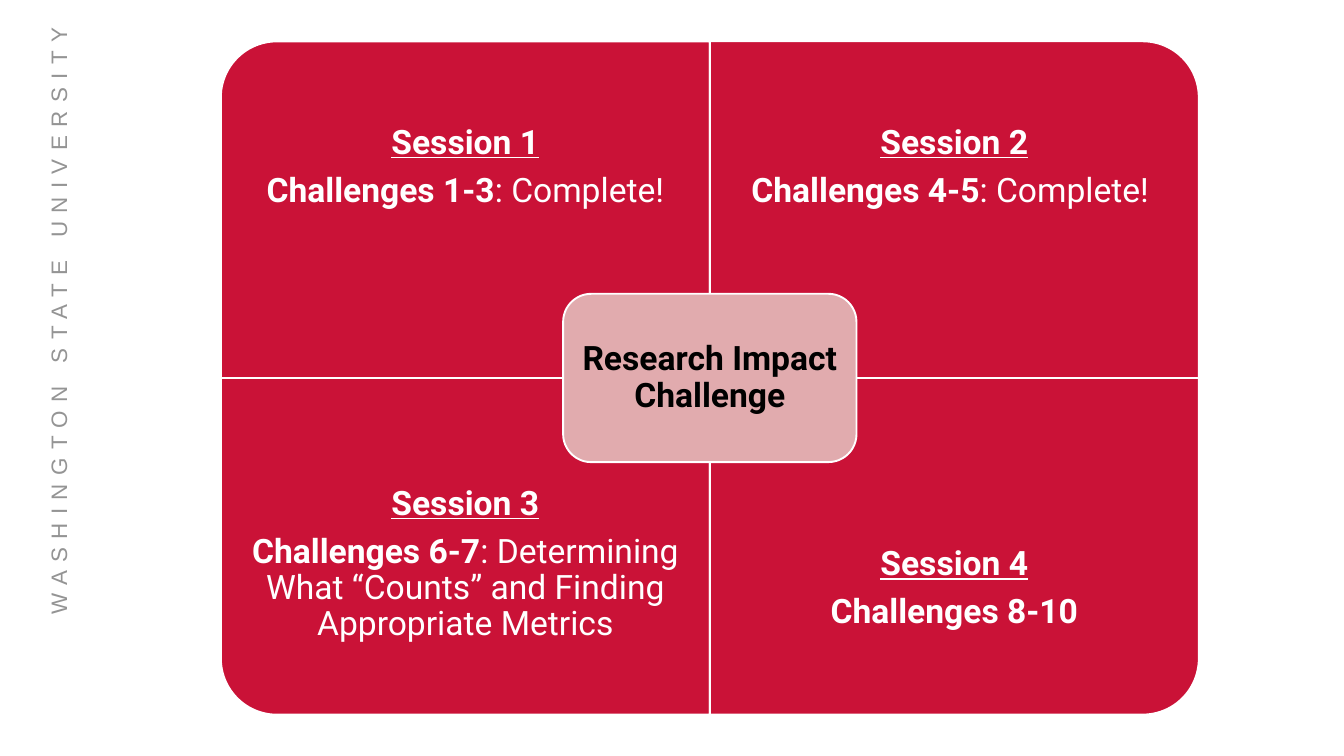
from pptx import Presentation
from pptx.dml.color import RGBColor
from pptx.enum.shapes import MSO_SHAPE
from pptx.enum.text import MSO_ANCHOR, PP_ALIGN
from pptx.util import Inches, Pt

UNIVERSITY = "WASHINGTON STATE UNIVERSITY"
HUB = "Research Impact Challenge"
SESSIONS = [
    {"title": "Session 1", "challenges": "Challenges 1-3", "status": ": Complete!",
     "column": 0, "row": 0, "rotation": 270, "raise": 0},
    {"title": "Session 2", "challenges": "Challenges 4-5", "status": ": Complete! ",
     "column": 1, "row": 0, "rotation": 0, "raise": 0},
    {"title": "Session 3", "challenges": "Challenges 6-7",
     "status": ": Determining What “Counts” and Finding Appropriate Metrics",
     "column": 0, "row": 1, "rotation": 180, "raise": 0.48},
    {"title": "Session 4", "challenges": "Challenges 8-10", "status": "",
     "column": 1, "row": 1, "rotation": 90, "raise": 0},
]
THEME = {
    "crimson": RGBColor(0xCA, 0x12, 0x37),
    "rose": RGBColor(0xE1, 0xAB, 0xAE),
    "white": RGBColor(0xFF, 0xFF, 0xFF),
    "black": RGBColor(0, 0, 0),
    "gray": RGBColor(0x94, 0x94, 0x94),
    "body_font": "Roboto",
    "side_font": "Arial",
    "body_size": Pt(24),
    "side_size": Pt(16),
    "paragraph_gap": Pt(8.4),
    "outline": Pt(1.35),
}
GRID_LEFT, GRID_TOP = 2.19, 0.41
CELL_WIDTH, CELL_HEIGHT = 4.85, 3.34
LABEL_HEIGHT = 2.5
HUB_WIDTH, HUB_HEIGHT = 2.91, 1.67


def add_panel(slide, kind, center_x, center_y, width, height, fill, rotation=0):
    if rotation % 180:
        width, height = height, width
    panel = slide.shapes.add_shape(
        kind, Inches(center_x - width / 2), Inches(center_y - height / 2),
        Inches(width), Inches(height))
    panel.rotation = rotation
    panel.shadow.inherit = False
    panel.fill.solid()
    panel.fill.fore_color.rgb = fill
    panel.line.color.rgb = THEME["white"]
    panel.line.width = THEME["outline"]
    return panel


def set_margins(frame, margin, extra_bottom=0):
    frame.word_wrap = True
    frame.vertical_anchor = MSO_ANCHOR.MIDDLE
    frame.margin_left = frame.margin_right = frame.margin_top = Inches(margin)
    frame.margin_bottom = Inches(margin + extra_bottom)


def format_paragraph(paragraph, color):
    paragraph.alignment = PP_ALIGN.CENTER
    paragraph.line_spacing = 0.9
    paragraph.space_after = THEME["paragraph_gap"]
    for run in paragraph.runs:
        run.font.name = THEME["body_font"]
        run.font.size = THEME["body_size"]
        run.font.color.rgb = color
        run.font.bold = True


def add_session(slide, session):
    left = GRID_LEFT + session["column"] * CELL_WIDTH
    top = GRID_TOP + session["row"] * CELL_HEIGHT
    add_panel(slide, MSO_SHAPE.ROUND_1_RECTANGLE, left + CELL_WIDTH / 2,
              top + CELL_HEIGHT / 2, CELL_WIDTH, CELL_HEIGHT,
              THEME["crimson"], session["rotation"])

    label_top = top + session["row"] * (CELL_HEIGHT - LABEL_HEIGHT)
    label = slide.shapes.add_textbox(Inches(left), Inches(label_top),
                                     Inches(CELL_WIDTH), Inches(LABEL_HEIGHT))
    frame = label.text_frame
    set_margins(frame, 0.19, session["raise"])
    title = frame.paragraphs[0]
    title.text = session["title"]
    format_paragraph(title, THEME["white"])
    title.runs[0].font.underline = True

    detail = frame.add_paragraph()
    detail.text = session["challenges"]
    if session["status"]:
        detail.add_run().text = session["status"]
    format_paragraph(detail, THEME["white"])
    for status in detail.runs[1:]:
        status.font.bold = False


def add_hub(slide):
    hub = add_panel(slide, MSO_SHAPE.ROUNDED_RECTANGLE, GRID_LEFT + CELL_WIDTH,
                    GRID_TOP + CELL_HEIGHT, HUB_WIDTH, HUB_HEIGHT, THEME["rose"])
    set_margins(hub.text_frame, 0.1)
    hub.text_frame.text = HUB
    format_paragraph(hub.text_frame.paragraphs[0], THEME["black"])


def add_university(slide):
    university = slide.shapes.add_textbox(Inches(-2.52), Inches(2.91),
                                          Inches(6.2), Inches(0.37))
    university.rotation = 270
    university.text_frame.word_wrap = True
    university.text_frame.text = UNIVERSITY
    run = university.text_frame.paragraphs[0].runs[0]
    run.font.name = THEME["side_font"]
    run.font.size = THEME["side_size"]
    run.font.color.rgb = THEME["gray"]
    run._r.get_or_add_rPr().set("spc", "600")


def main():
    deck = Presentation()
    deck.slide_width, deck.slide_height = Inches(13.33), Inches(7.5)
    slide = deck.slides.add_slide(deck.slide_layouts[6])
    add_university(slide)
    for session in SESSIONS:
        add_session(slide, session)
    add_hub(slide)
    deck.save("out.pptx")


if __name__ == "__main__":
    main()
